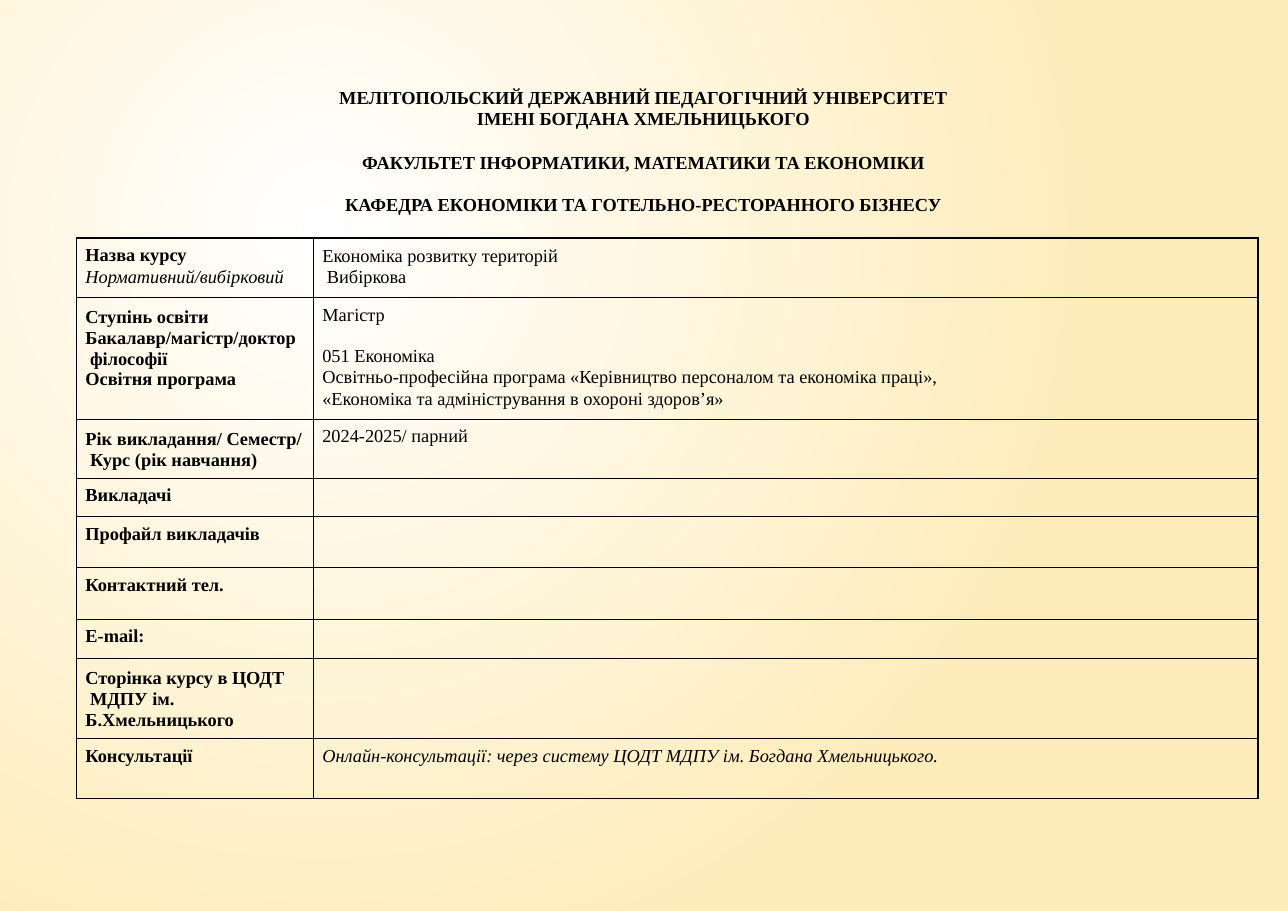
"""Build the course passport slide of the economics department."""
from dataclasses import dataclass

from lxml.etree import SubElement
from pptx import Presentation
from pptx.dml.color import RGBColor
from pptx.enum.text import MSO_ANCHOR, MSO_AUTO_SIZE, PP_ALIGN
from pptx.oxml import parse_xml
from pptx.oxml.ns import nsdecls, qn
from pptx.slide import Slide
from pptx.table import _Cell as Cell
from pptx.text.text import TextFrame
from pptx.util import Cm, Pt

COLORS = {"ink": "000000", "glow": "FFFFFF", "cream": "FEECBA"}
FONT = "Times New Roman"
COLUMN_WIDTHS = (5.46, 21.77)


@dataclass(frozen=True)
class Para:
    """One paragraph of a table cell, with distances in points."""

    text: str
    spacing: float = 13.8
    before: float = 0
    bold: bool = False
    italic: bool = False


@dataclass(frozen=True)
class CourseRow:
    """A row of the course table, with lengths in centimetres."""

    height: float
    label: tuple[Para, ...]
    value: tuple[Para, ...] = ()
    label_top: float = 0.15
    value_top: float = 0.15


def label(text: str, before: float = 4.5, spacing: float = 13.8) -> Para:
    """Return a bold paragraph for the left column."""
    return Para(text, spacing, before, bold=True)


HEADINGS = (
    Para("МЕЛІТОПОЛЬСКИЙ ДЕРЖАВНИЙ ПЕДАГОГІЧНИЙ УНІВЕРСИТЕТ\n"
         "ІМЕНІ БОГДАНА ХМЕЛЬНИЦЬКОГО", 13.8, 1.9, bold=True),
    Para("ФАКУЛЬТЕТ ІНФОРМАТИКИ, МАТЕМАТИКИ ТА ЕКОНОМІКИ\n"
         "КАФЕДРА ЕКОНОМІКИ ТА ГОТЕЛЬНО-РЕСТОРАННОГО БІЗНЕСУ", 27.6, 0.8, bold=True),
)

COURSE_ROWS = (
    CourseRow(1.37,
              (label("Назва курсу", spacing=14),
               Para("Нормативний/вибірковий", 14, italic=True)),
              (Para("Економіка розвитку територій\n Вибіркова", before=5.2),),
              value_top=0.17),
    CourseRow(2.81,
              (label("Ступінь освіти\nБакалавр/магістр/доктор\n філософії", 5.5),
               label("Освітня програма", 0, 13.4)),
              (Para("Магістр", before=4.3),
               Para("051 Економіка", 14.1, 13),
               Para("Освітньо-професійна програма «Керівництво персоналом "
                    "та економіка праці»,"),
               Para("«Економіка та адміністрування в охороні здоров’я»", 14.1)),
              label_top=0.2),
    CourseRow(1.36,
              (label("Рік викладання/ Семестр/\n Курс (рік навчання)", 5.5),),
              (Para("2024-2025/ парний", before=4.3),),
              label_top=0.2),
    CourseRow(0.88, (label("Викладачі"),)),
    CourseRow(1.18, (label("Профайл викладачів"),)),
    CourseRow(1.19, (label("Контактний тел."),)),
    CourseRow(0.91, (label("E-mail:"),)),
    CourseRow(1.84,
              (label("Сторінка курсу в ЦОДТ\n МДПУ ім.", 5.5),
               label("Б.Хмельницького", 0, 13.4)),
              label_top=0.2),
    CourseRow(1.38,
              (label("Консультації"),),
              (Para("Онлайн-консультації: через систему ЦОДТ МДПУ "
                    "ім. Богдана Хмельницького.", before=4.3, italic=True),)),
)


def add_text(frame: TextFrame, text: str, *, spacing: float, before: float = 0,
             bold: bool = False, italic: bool = False,
             align: PP_ALIGN = PP_ALIGN.LEFT) -> None:
    """Write a formatted paragraph, reusing the first one while it is empty."""
    para = frame.add_paragraph() if frame.text else frame.paragraphs[0]
    para.text = text
    para.alignment = align
    para.line_spacing = Pt(spacing)
    para.space_before = Pt(before)
    for span in para.runs:
        span.font.name = FONT
        span.font.size = Pt(12)
        span.font.bold = bold
        span.font.italic = italic
        span.font.color.rgb = RGBColor.from_string(COLORS["ink"])


def add_paras(frame: TextFrame, paras: tuple[Para, ...], align: PP_ALIGN) -> None:
    """Write a series of paragraphs with one alignment."""
    for para in paras:
        add_text(frame, para.text, spacing=para.spacing, before=para.before,
                 bold=para.bold, italic=para.italic, align=align)


def paint_background(page: Slide) -> None:
    """Fill the page with a radial glow from white to cream."""
    fill = page.background.fill
    fill.gradient()
    for stop, position, name in zip(fill.gradient_stops, (0, 1), ("glow", "cream")):
        stop.position = position
        stop.color.rgb = RGBColor.from_string(COLORS[name])
    gradient = page.element.find(f".//{qn('a:gradFill')}")
    gradient.remove(gradient.find(qn("a:lin")))
    circle = SubElement(gradient, qn("a:path"), path="circle")
    SubElement(circle, qn("a:fillToRect"), l="50000", t="50000", r="100000", b="100000")


def add_heading(page: Slide) -> None:
    """Place and format the title placeholder."""
    title = page.shapes.title
    title.left, title.top, title.width, title.height = Cm(7.75), Cm(1.93), Cm(14.17), Cm(3.02)
    frame = title.text_frame
    frame.word_wrap = True
    frame.auto_size = MSO_AUTO_SIZE.NONE
    frame.vertical_anchor = MSO_ANCHOR.TOP
    frame.margin_left = frame.margin_right = frame.margin_bottom = 0
    frame.margin_top = Cm(0.08)
    add_paras(frame, HEADINGS, PP_ALIGN.CENTER)


def fill_cell(cell: Cell, paras: tuple[Para, ...], top: float) -> None:
    """Format a transparent bordered cell and write its text."""
    cell.margin_left = Cm(0.2)
    cell.margin_right = cell.margin_bottom = 0
    cell.margin_top = Cm(top if paras else 0)
    cell.fill.background()
    properties = cell._tc.get_or_add_tcPr()
    for index, side in enumerate("LRTB"):
        properties.insert(index, parse_xml(
            f'<a:ln{side} {nsdecls("a")} w="{Pt(1)}"><a:solidFill>'
            f'<a:srgbClr val="{COLORS["ink"]}"/></a:solidFill></a:ln{side}>'))
    add_paras(cell.text_frame, paras, PP_ALIGN.LEFT)


def add_course_table(page: Slide) -> None:
    """Draw the table of course details."""
    height = sum(row.height for row in COURSE_ROWS)
    table = page.shapes.add_table(len(COURSE_ROWS), len(COLUMN_WIDTHS), Cm(1.77), Cm(5.49),
                                  Cm(sum(COLUMN_WIDTHS)), Cm(height)).table
    table.first_row = table.horz_banding = False
    for column, width in zip(table.columns, COLUMN_WIDTHS):
        column.width = Cm(width)
    for line, row in zip(table.rows, COURSE_ROWS):
        line.height = Cm(row.height)
        fill_cell(line.cells[0], row.label, row.label_top)
        fill_cell(line.cells[1], row.value, row.value_top)


def main() -> None:
    """Create the deck and save it."""
    deck = Presentation()
    deck.slide_width, deck.slide_height = Cm(29.69), Cm(21.01)
    page = deck.slides.add_slide(deck.slide_layouts.get_by_name("Title Only"))
    paint_background(page)
    add_heading(page)
    add_course_table(page)
    deck.save("out.pptx")


if __name__ == "__main__":
    main()
